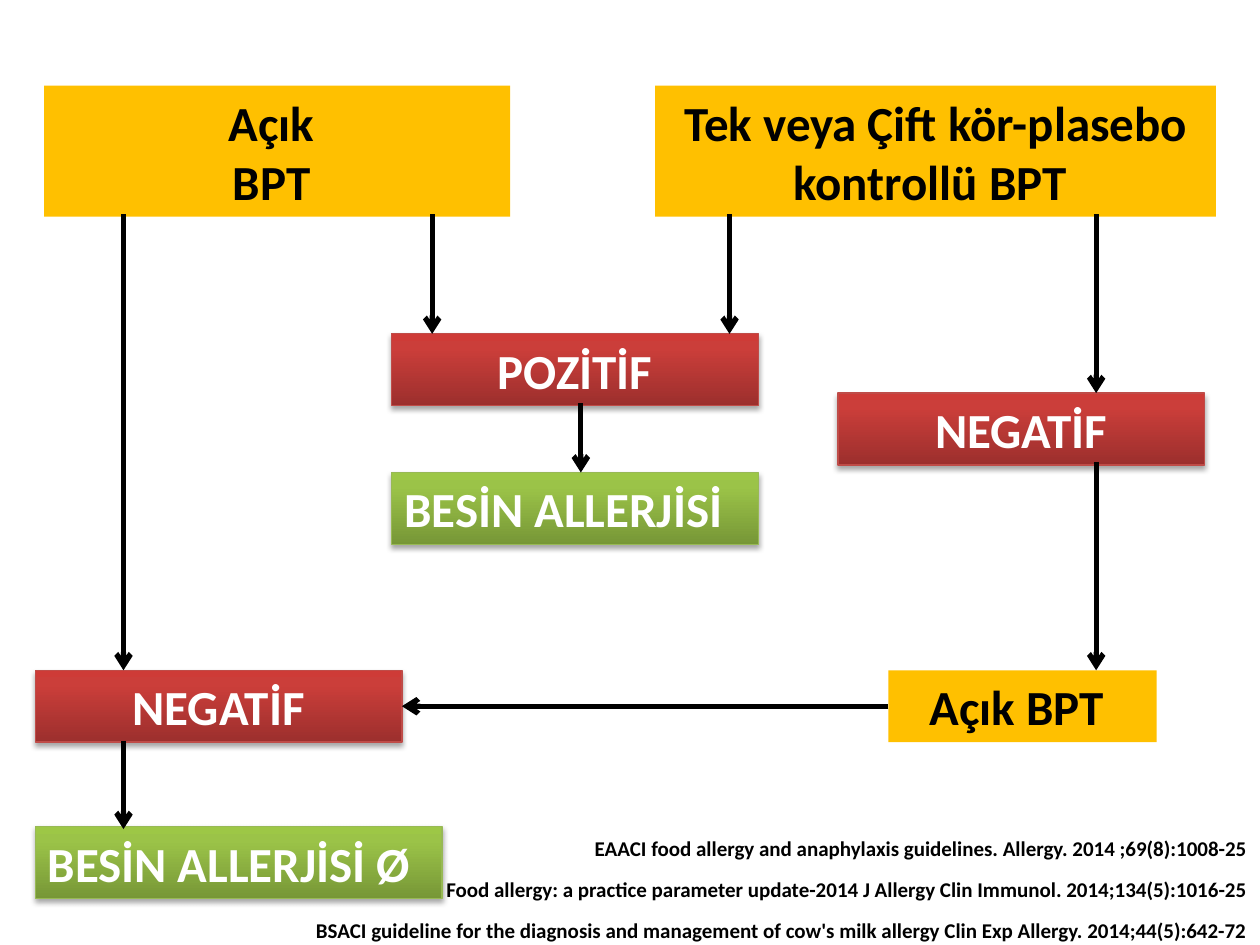
from lxml import etree
from pptx import Presentation
from pptx.dml.color import RGBColor
from pptx.enum.shapes import MSO_CONNECTOR, MSO_SHAPE
from pptx.enum.text import MSO_ANCHOR, PP_ALIGN
from pptx.oxml.ns import qn
from pptx.util import Inches, Pt

RECTANGLE = MSO_SHAPE.RECTANGLE
STRAIGHT = MSO_CONNECTOR.STRAIGHT
LEFT, CENTER, RIGHT = PP_ALIGN.LEFT, PP_ALIGN.CENTER, PP_ALIGN.RIGHT
TOP, MIDDLE = MSO_ANCHOR.TOP, MSO_ANCHOR.MIDDLE
LEFT_SIDE, RIGHT_SIDE = 1, 3

COLORS = {"amber": "FFC000", "black": "000000", "white": "FFFFFF",
          "red line": "BF4C48", "green line": "98B955"}
# Gradient stops from the bottom edge up: (percent, colour)
GRADIENTS = {
    "red": [(0, "9C2F2D"), (80, "CB3E3A"), (100, "CE3B37")],
    "green": [(0, "779737"), (80, "9BC348"), (100, "9DC746")],
}
FONT = "Calibri"
ROW = 0.57

# name: (lines, style, alignment, (left, top, width, height))
BOXES = {
    "open test": (["Açık ", "BPT "], "amber", CENTER, (0.35, 0.68, 3.7, 1.04)),
    "blind test": (["Tek veya Çift kör-plasebo kontrollü BPT "], "amber", CENTER,
                   (5.2, 0.68, 4.45, 1.04)),
    "positive": (["POZİTİF"], "red", CENTER, (3.11, 2.65, 2.91, ROW)),
    "allergy": (["BESİN ALLERJİSİ"], "green", LEFT, (3.11, 3.75, 2.91, ROW)),
    "negative open": (["NEGATİF"], "red", CENTER, (0.28, 5.32, 2.91, ROW)),
    "no allergy": (["BESİN ALLERJİSİ Ø"], "green", LEFT, (0.28, 6.56, 3.23, ROW)),
    "negative blind": (["NEGATİF"], "red", CENTER, (6.65, 3.12, 2.91, ROW)),
    "open retest": (["Açık BPT "], "amber", CENTER, (7.05, 5.32, 2.13, ROW)),
}
# Downward arrows: (x, start y, end y)
DOWN_ARROWS = [(3.43, 1.7, 2.65), (0.98, 1.7, 5.32), (5.79, 1.7, 2.65),
               (4.61, 3.2, 3.75), (8.7, 1.7, 3.12), (8.7, 3.67, 5.32),
               (0.98, 5.88, 6.58)]
# References: (text, left, top); all end at the right slide edge
REFERENCES = [
    ("EAACI food allergy and anaphylaxis guidelines. Allergy. 2014 ;69(8):1008-25",
     0.67, 6.58),
    ("Food allergy: a practice parameter update-2014 J Allergy Clin Immunol. "
     "2014;134(5):1016-25", 0.87, 6.91),
    ("BSACI guideline for the diagnosis and management of cow's milk allergy "
     "Clin Exp Allergy. 2014;44(5):642-72", 2.24, 7.23),
]


def rgb(name):
    return RGBColor.from_string(COLORS[name])


def write(shape, lines, size, color, alignment, anchor):
    frame = shape.text_frame
    frame.word_wrap = True
    frame.vertical_anchor = anchor
    for index, line in enumerate(lines):
        para = frame.add_paragraph() if index else frame.paragraphs[0]
        para.text = line
        para.alignment = alignment
        para.font.name, para.font.size, para.font.bold = FONT, Pt(size), True
        para.font.color.rgb = rgb(color)


def add_color(parent, value):
    return etree.SubElement(parent, qn("a:srgbClr"), val=value)


def paint_gradient(box, style):
    box.fill.gradient()
    box.fill.gradient_angle = 90
    stops = box.element.spPr.find(qn("a:gradFill")).find(qn("a:gsLst"))
    for stop in list(stops):
        stops.remove(stop)
    for percent, value in GRADIENTS[style]:
        add_color(etree.SubElement(stops, qn("a:gs"), pos=str(percent * 1000)), value)
    box.line.color.rgb = rgb(style + " line")
    box.line.width = Pt(0.75)


def add_shadow(box):
    effects = box.element.spPr.find(qn("a:effectLst"))
    shadow = etree.SubElement(effects, qn("a:outerShdw"), blurRad=str(Pt(3.1)),
                              dist=str(Pt(1.8)), dir="5400000", rotWithShape="0")
    etree.SubElement(add_color(shadow, COLORS["black"]), qn("a:alpha"), val="35000")


def add_box(slide, lines, style, alignment, place):
    box = slide.shapes.add_shape(RECTANGLE, *map(Inches, place))
    box.shadow.inherit = False
    if style in GRADIENTS:
        paint_gradient(box, style)
        add_shadow(box)
    else:
        box.fill.solid()
        box.fill.fore_color.rgb = rgb(style)
        box.line.fill.background()
    text_color = "white" if style in GRADIENTS else "black"
    write(box, lines, 28, text_color, alignment, MIDDLE)
    return box


def add_arrow(slide, x1=0, y1=0, x2=0, y2=0):
    arrow = slide.shapes.add_connector(STRAIGHT, *map(Inches, (x1, y1, x2, y2)))
    arrow.line.color.rgb = rgb("black")
    arrow.line.width = Pt(3)
    properties = arrow.element.spPr
    etree.SubElement(properties.find(qn("a:ln")), qn("a:tailEnd"), type="arrow")
    etree.SubElement(properties, qn("a:effectLst"))
    return arrow


def main():
    deck = Presentation()
    deck.slide_width, deck.slide_height = Inches(10), Inches(7.5)
    slide = deck.slides.add_slide(deck.slide_layouts[6])

    # Flowchart boxes
    boxes = {name: add_box(slide, *parts) for name, parts in BOXES.items()}

    # Arrows
    for x, start, end in DOWN_ARROWS:
        add_arrow(slide, x, start, x, end)
    across = add_arrow(slide)
    across.begin_connect(boxes["open retest"], LEFT_SIDE)
    across.end_connect(boxes["negative open"], RIGHT_SIDE)

    # References
    for text, left, top in REFERENCES:
        note = slide.shapes.add_textbox(*map(Inches, (left, top, 10 - left, 0.3)))
        write(note, [text], 12, "black", RIGHT, TOP)

    deck.save("out.pptx")


if __name__ == "__main__":
    main()
